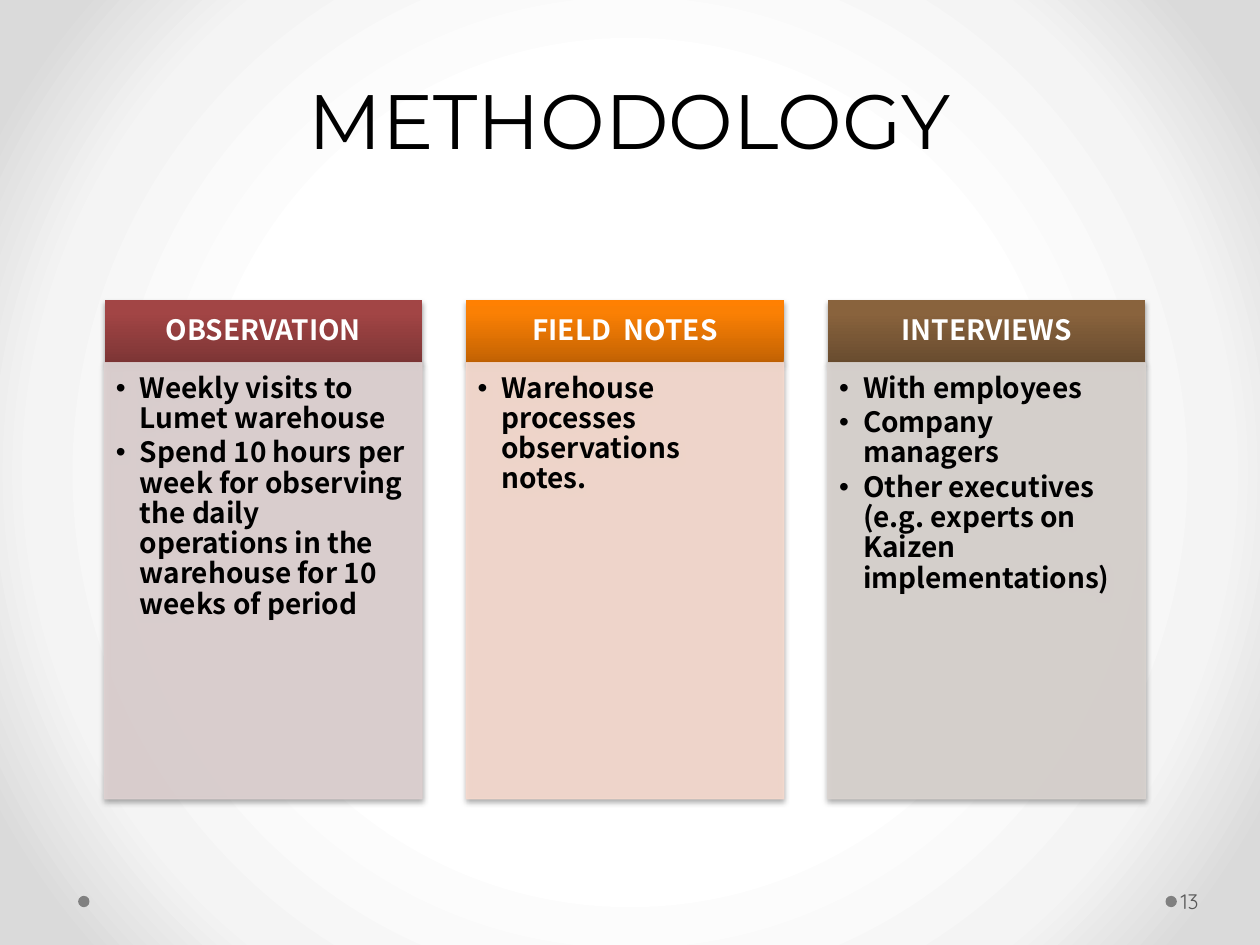
from dataclasses import dataclass

from lxml import etree
from pptx import Presentation
from pptx import util as u
from pptx.dml.color import RGBColor
from pptx.enum import shapes, text
from pptx.oxml.ns import qn


@dataclass(frozen=True)
class Theme:
    ink: str = "000000"
    light: str = "FFFFFF"
    dot: str = "808080"
    muted: str = "595959"
    title_font: str = "Montserrat"
    body_font: str = "Noto Sans CJK SC"
    number_font: str = "Quicksand"
    title_size: int = 44
    body_size: int = 16
    number_size: int = 12
    background: tuple = ((50, "FFFFFF"), (76, "F4F4F4"), (92, "DADADA"))


COLUMNS = [
    ("OBSERVATION", ("7D3535", "A24545", "A44343"), "DED1D1",
     ["Weekly visits to Lumet warehouse",
      "Spend 10 hours per week for observing the daily operations "
      "in the warehouse for 10 weeks of period"]),
    ("FIELD  NOTES", ("C26203", "FB8004", "FF8002"), "F5D9CD",
     ["Warehouse processes observations notes."]),
    ("INTERVIEWS", ("694C2F", "89633D", "8B633C"), "D9D3CF",
     ["With employees", "Company managers",
      "Other executives (e.g. experts on Kaizen implementations)"]),
]


def child(parent, tag, **attrs):
    return etree.SubElement(parent, qn(tag), {k: str(v) for k, v in attrs.items()})


class Deck:
    GRID_COLUMNS, GRID_ROWS = 100, 75

    def __init__(self, theme):
        self.theme = theme
        self.prs = Presentation()
        self.prs.slide_width, self.prs.slide_height = u.Inches(10), u.Inches(7.5)
        self.s = self.prs.slides.add_slide(self.prs.slide_layouts[6])

    def box(self, left, top, width, height):
        dx = self.prs.slide_width / self.GRID_COLUMNS
        dy = self.prs.slide_height / self.GRID_ROWS
        return [round(n) for n in (left * dx, top * dy, width * dx, height * dy)]

    def gradient(self, fill, holder, stops, angle=None):
        fill.gradient()
        grad = next(holder.iter(qn("a:gradFill")))
        for part in list(grad):
            grad.remove(part)
        stop_list = child(grad, "a:gsLst")
        for position, color in stops:
            stop = child(stop_list, "a:gs", pos=position * 1000)
            child(stop, "a:srgbClr", val=color)
        if angle is None:
            route = child(grad, "a:path", path="circle")
            child(route, "a:fillToRect", l=50000, t=50000, r=50000, b=50000)
        else:
            child(grad, "a:lin", ang=angle * 60000, scaled=0)

    def background(self):
        self.gradient(self.s.background.fill, self.s.element, self.theme.background)

    def shape(self, kind, place):
        sp = self.s.shapes.add_shape(kind, *self.box(*place))
        sp.shadow.inherit = False
        sp.line.fill.background()
        return sp

    def dot(self, left, top):
        sp = self.shape(shapes.MSO_SHAPE.OVAL, (left, top, 0.9, 0.9))
        sp.fill.solid()
        sp.fill.fore_color.rgb = RGBColor.from_string(self.theme.dot)

    def shadow(self, sp):
        effects = sp.element.spPr.find(qn("a:effectLst"))
        outer = child(effects, "a:outerShdw", blurRad=u.Pt(3.1), dist=u.Pt(1.8),
                      dir=90 * 60000, rotWithShape=0)
        child(child(outer, "a:srgbClr", val=self.theme.ink), "a:alpha", val=35000)

    def frame(self, sp, anchor, insets):
        tf = sp.text_frame
        tf.word_wrap = True
        tf.vertical_anchor = anchor
        tf.margin_left, tf.margin_top, tf.margin_right, tf.margin_bottom = map(
            u.Inches, insets)
        return tf

    def run(self, p, words, font, size, color, bold=False, align=text.PP_ALIGN.LEFT):
        p.alignment = align
        r = p.add_run()
        r.text = words
        r.font.name, r.font.size, r.font.bold = font, u.Pt(size), bold
        r.font.color.rgb = RGBColor.from_string(color)
        child(r.font._element, "a:ea", typeface=font)

    def label(self, place, words, font, size, color, anchor, insets,
              align=text.PP_ALIGN.LEFT, spacing=None):
        sp = self.s.shapes.add_textbox(*self.box(*place))
        p = self.frame(sp, anchor, insets).paragraphs[0]
        p.line_spacing = spacing
        self.run(p, words, font, size, color, align=align)

    def header(self, place, words, colors):
        sp = self.shape(shapes.MSO_SHAPE.RECTANGLE, place)
        self.gradient(sp.fill, sp.element.spPr, zip((0, 80, 100), colors), 270)
        self.shadow(sp)
        p = self.frame(sp, text.MSO_ANCHOR.MIDDLE, (0.12, 0.07, 0.12, 0.07)).paragraphs[0]
        p.line_spacing = 0.9
        self.run(p, words, self.theme.body_font, self.theme.body_size,
                 self.theme.light, True, text.PP_ALIGN.CENTER)

    def panel(self, place, color, items):
        sp = self.shape(shapes.MSO_SHAPE.RECTANGLE, place)
        sp.line.width = u.Pt(0.75)
        for fill in (sp.fill, sp.line.fill):
            fill.solid()
            fill.fore_color.rgb = RGBColor.from_string(color)
        for tint in list(sp.element.spPr.iter(qn("a:srgbClr"))):
            child(tint, "a:alpha", val=90000)
        self.shadow(sp)
        tf = self.frame(sp, text.MSO_ANCHOR.TOP, (0.09, 0.09, 0.12, 0.14))
        for i, item in enumerate(items):
            p = tf.add_paragraph() if i else tf.paragraphs[0]
            p.level = 1
            p.line_spacing, p.space_after = 0.9, u.Pt(2.4)
            props = p._p.get_or_add_pPr()
            props.set("marL", str(u.Inches(0.19)))
            props.set("indent", str(u.Inches(-0.19)))
            child(props, "a:buFont", typeface="Arial")
            child(props, "a:buChar", char="•")
            self.run(p, item, self.theme.body_font, self.theme.body_size,
                     self.theme.ink, True)


def main():
    theme = Theme()
    deck = Deck(theme)
    deck.background()
    for left in (92.5, 6.2):
        deck.dot(left, 71.1)
    deck.label((5, 2.1, 90, 11.5), "METHODOLOGY", theme.title_font, theme.title_size,
               theme.ink, text.MSO_ANCHOR.BOTTOM, (0.1, 0.05, 0.1, 0.05),
               text.PP_ALIGN.CENTER, u.Pt(58))
    deck.label((93.4, 69.5, 6.1, 4), "13", theme.number_font, theme.number_size,
               theme.muted, text.MSO_ANCHOR.MIDDLE, (0.03, 0.05, 0.05, 0.05))

    first, step, width, top, head, body = 8.3, 28.7, 25.2, 23.8, 5, 34.6
    for i, (heading, colors, tint, items) in enumerate(COLUMNS):
        left = first + i * step
        deck.header((left, top, width, head), heading, colors)
        deck.panel((left, top + head, width, body), tint, items)
    deck.prs.save("out.pptx")


if __name__ == "__main__":
    main()
